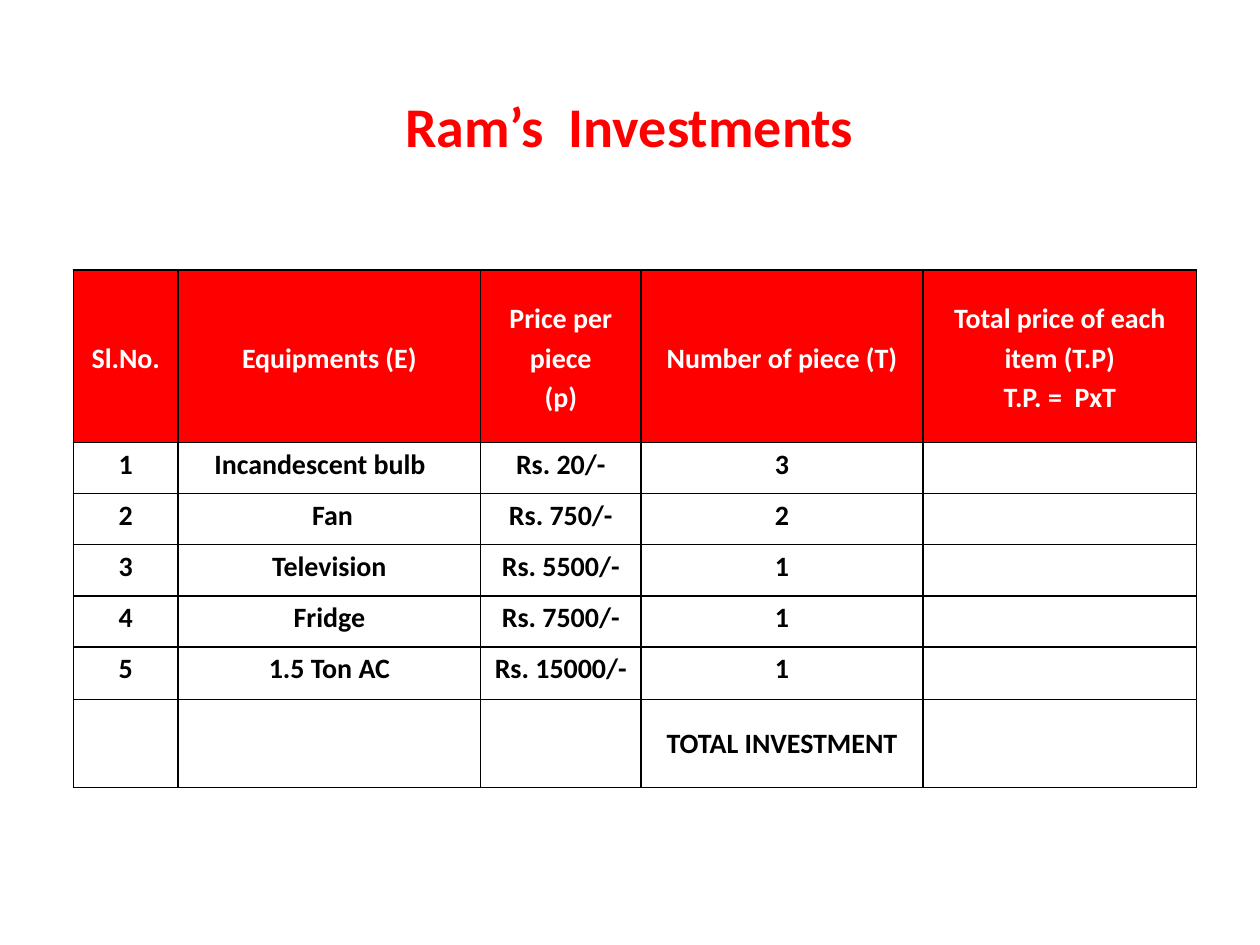
from lxml import etree
from pptx import Presentation, util as u
from pptx.dml.color import RGBColor
from pptx.enum import text
from pptx.oxml.ns import qn

COLORS = {"red": "FF0000", "white": "FFFFFF", "black": "000000"}
COLUMN_WIDTHS = [2.11, 6.1, 3.23, 5.69, 5.51]
ROW_HEIGHTS = [3.48] + [1.03] * 4 + [1.06, 1.78]
HEADINGS = ["Sl.No.", "Equipments (E)", "Price per\npiece\n(p)", "Number of piece (T)",
            "Total price of each item (T.P)\nT.P. =  PxT"]
EQUIPMENT = [
    ("Incandescent bulb", 20, 3),
    (" Fan", 750, 2),
    ("Television", 5500, 1),
    ("Fridge", 7500, 1),
    ("1.5 Ton AC", 15000, 1),
]


def write(frame, content, *, size=16, color="black", spacing=None, font="Calibri"):
    for index, line in enumerate(content.split("\n")):
        para = frame.paragraphs[0] if index == 0 else frame.add_paragraph()
        para.alignment = text.PP_ALIGN.CENTER
        para.line_spacing = spacing
        span = para.add_run()
        span.text = line
        span.font.name, span.font.size, span.font.bold = font, u.Pt(size), True
        span.font.color.rgb = RGBColor.from_string(COLORS[color])


class SlideBuilder:
    """Hold the shared style and the page being filled."""

    def __init__(self, page, inset=0.18, border=1):
        self.page, self.inset, self.border = page, inset, border

    def title(self, content, left, top, width, height):
        box = self.page.shapes.add_textbox(*map(u.Cm, (left, top, width, height)))
        frame = box.text_frame
        frame.word_wrap = True
        frame.vertical_anchor = text.MSO_ANCHOR.MIDDLE
        write(frame, content, size=32, color="red")

    def outline(self, cell):
        properties = cell._tc.get_or_add_tcPr()
        for index, side in enumerate(("lnL", "lnR", "lnT", "lnB")):
            line = etree.Element(qn(f"a:{side}"), w=str(u.Pt(self.border)))
            fill = etree.SubElement(line, qn("a:solidFill"))
            etree.SubElement(fill, qn("a:srgbClr"), val=COLORS["black"])
            properties.insert(index, line)

    def cell(self, cell, content, *, header=False, middle=False, spacing=1.15):
        cell.margin_left = cell.margin_right = u.Cm(self.inset)
        cell.margin_top = cell.margin_bottom = 0
        cell.vertical_anchor = text.MSO_ANCHOR.MIDDLE if middle else text.MSO_ANCHOR.TOP
        if header:
            cell.fill.solid()
            cell.fill.fore_color.rgb = RGBColor.from_string(COLORS["red"])
        else:
            cell.fill.background()
        self.outline(cell)
        if content:
            write(cell.text_frame, content, color="white" if header else "black", spacing=spacing)

    def table(self, rows, left, top):
        size = sum(COLUMN_WIDTHS), sum(ROW_HEIGHTS)
        table = self.page.shapes.add_table(
            len(rows), len(COLUMN_WIDTHS), *map(u.Cm, (left, top, *size))).table
        table.first_row = table.horz_banding = False
        for column, width in zip(table.columns, COLUMN_WIDTHS):
            column.width = u.Cm(width)
        last = len(rows) - 1
        for r, (values, height) in enumerate(zip(rows, ROW_HEIGHTS)):
            table.rows[r].height = u.Cm(height)
            for c, value in enumerate(values):
                self.cell(table.cell(r, c), value, header=r == 0, middle=r in (0, last),
                          spacing=None if r == last else 1.15)
        return table


def main():
    deck = Presentation()
    deck.slide_width, deck.slide_height = u.Cm(25.4), u.Cm(19.05)
    builder = SlideBuilder(deck.slides.add_slide(deck.slide_layouts[6]))
    items = [[str(number), name, f"Rs. {price}/-", str(count), ""]
             for number, (name, price, count) in enumerate(EQUIPMENT, 1)]
    total = ["", "", "", "TOTAL INVESTMENT", ""]
    table = builder.table([HEADINGS, *items, total], 1.48, 5.44)
    table.cell(1, 1).margin_right = u.Cm(0.56)
    builder.title("Ram’s  Investments", -0.43, 0.84, 26.24, 3.38)
    deck.save("out.pptx")


if __name__ == "__main__":
    main()
